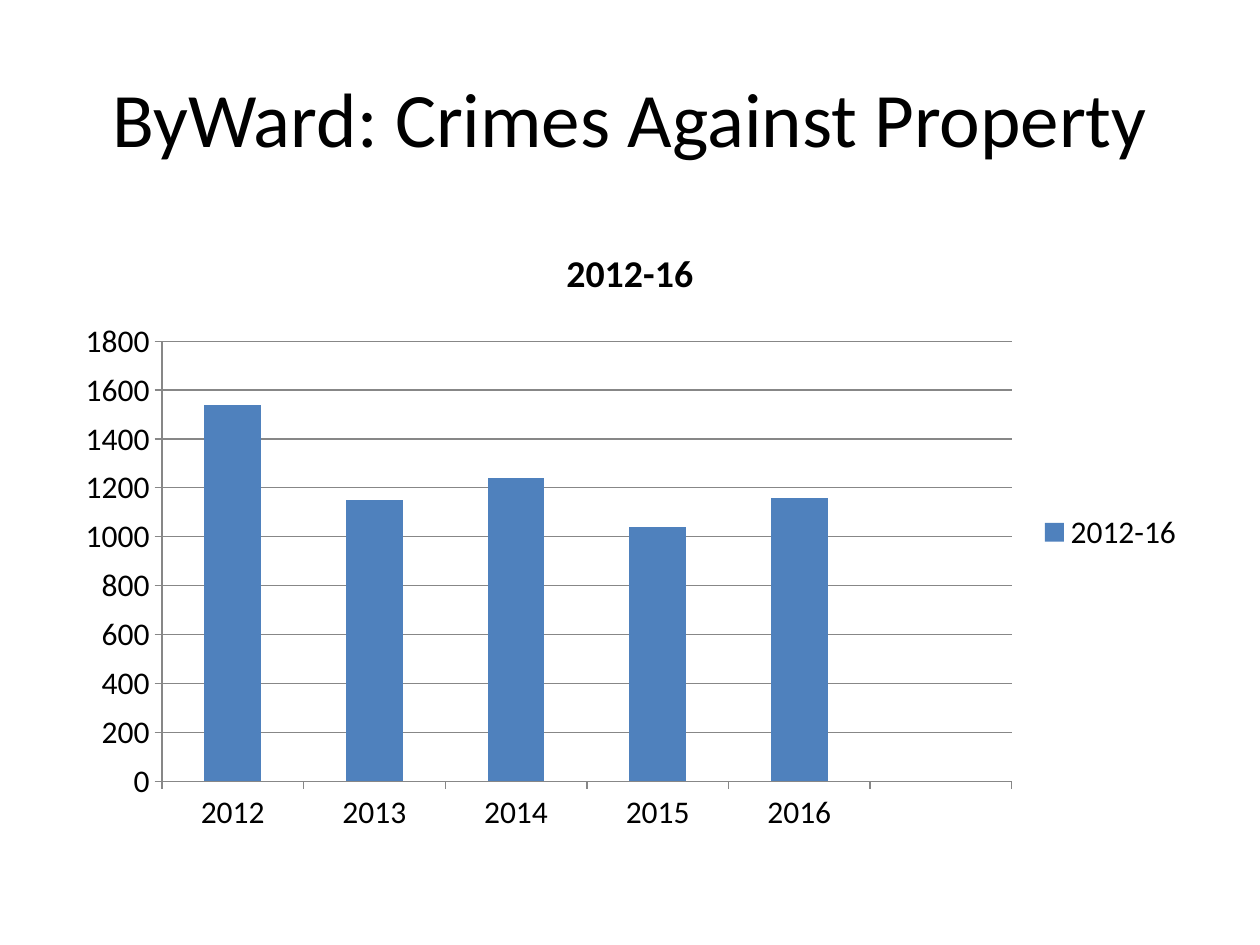
from dataclasses import dataclass

from pptx import Presentation
from pptx.chart.data import CategoryChartData
from pptx.dml.color import RGBColor
from pptx.enum.chart import XL_CHART_TYPE, XL_LEGEND_POSITION, XL_TICK_MARK
from pptx.enum.text import MSO_ANCHOR, PP_ALIGN
from pptx.util import Inches, Pt

COLUMNS = XL_CHART_TYPE.COLUMN_CLUSTERED
LEGEND_RIGHT = XL_LEGEND_POSITION.RIGHT
TICK_OUTSIDE = XL_TICK_MARK.OUTSIDE
TICK_NONE = XL_TICK_MARK.NONE
MIDDLE = MSO_ANCHOR.MIDDLE
CENTER = PP_ALIGN.CENTER

SLIDE_WIDTH, SLIDE_HEIGHT = Inches(10), Inches(7.5)
# Shares of the slide's size: left, top, width, height
TITLE_AREA = (0.05, 0.04, 0.9, 1 / 6)
CHART_AREA = (0.05, 0.7 / 3, 0.9, 0.66)

PERIOD = "2012-16"
CRIMES_BY_YEAR = {
    "2012": 1540,
    "2013": 1150,
    "2014": 1240,
    "2015": 1040,
    "2016": 1160,
    "": None,
}


@dataclass(frozen=True)
class Theme:
    font: str = "Calibri"
    text: RGBColor = RGBColor(0x00, 0x00, 0x00)
    bar: RGBColor = RGBColor(0x4F, 0x81, 0xBD)
    line: RGBColor = RGBColor(0x87, 0x87, 0x87)
    title_size: float = 44
    chart_title_size: float = 21.6
    chart_size: float = 18
    line_width: float = 0.75


THEME = Theme()


def place(area):
    """Turn shares of the slide's size into lengths."""
    sides = (SLIDE_WIDTH, SLIDE_HEIGHT) * 2
    return [round(share * side) for share, side in zip(area, sides)]


def style_font(font, size, bold=False):
    font.name = THEME.font
    font.size = Pt(size)
    font.bold = bold
    font.color.rgb = THEME.text


def style_line(line):
    line.color.rgb = THEME.line
    line.width = Pt(THEME.line_width)


def write(frame, text, size, bold=False):
    para = frame.paragraphs[0]
    para.alignment = CENTER
    span = para.add_run()
    span.text = text
    style_font(span.font, size, bold)


def fill_title(page, text):
    title = page.shapes.title
    title.left, title.top, title.width, title.height = place(TITLE_AREA)
    title.text_frame.vertical_anchor = MIDDLE
    write(title.text_frame, text, THEME.title_size)


def style_axis(axis, gridlines):
    axis.major_tick_mark = TICK_OUTSIDE
    axis.minor_tick_mark = TICK_NONE
    axis.has_major_gridlines = gridlines
    style_line(axis.format.line)
    if gridlines:
        style_line(axis.major_gridlines.format.line)


def add_column_chart(page, name, values):
    data = CategoryChartData()
    data.categories = list(values)
    data.add_series(name, list(values.values()))
    chart = page.shapes.add_chart(COLUMNS, *place(CHART_AREA), data).chart
    style_font(chart.font, THEME.chart_size)

    chart.has_title = True
    write(chart.chart_title.text_frame, name, THEME.chart_title_size, bold=True)
    chart.chart_title.include_in_layout = False

    chart.has_legend = True
    chart.legend.position = LEGEND_RIGHT
    chart.legend.include_in_layout = False

    style_axis(chart.category_axis, gridlines=False)
    style_axis(chart.value_axis, gridlines=True)
    chart.value_axis.minimum_scale = 0
    chart.value_axis.maximum_scale = 1800
    chart.value_axis.major_unit = 200

    plot = chart.plots[0]
    plot.gap_width = 150
    plot.vary_by_categories = False
    fill = plot.series[0].format.fill
    fill.solid()
    fill.fore_color.rgb = THEME.bar


def main():
    deck = Presentation()
    deck.slide_width, deck.slide_height = SLIDE_WIDTH, SLIDE_HEIGHT
    page = deck.slides.add_slide(deck.slide_layouts.get_by_name("Title Only"))
    fill_title(page, "ByWard: Crimes Against Property")
    add_column_chart(page, PERIOD, CRIMES_BY_YEAR)
    deck.save("out.pptx")


if __name__ == "__main__":
    main()
